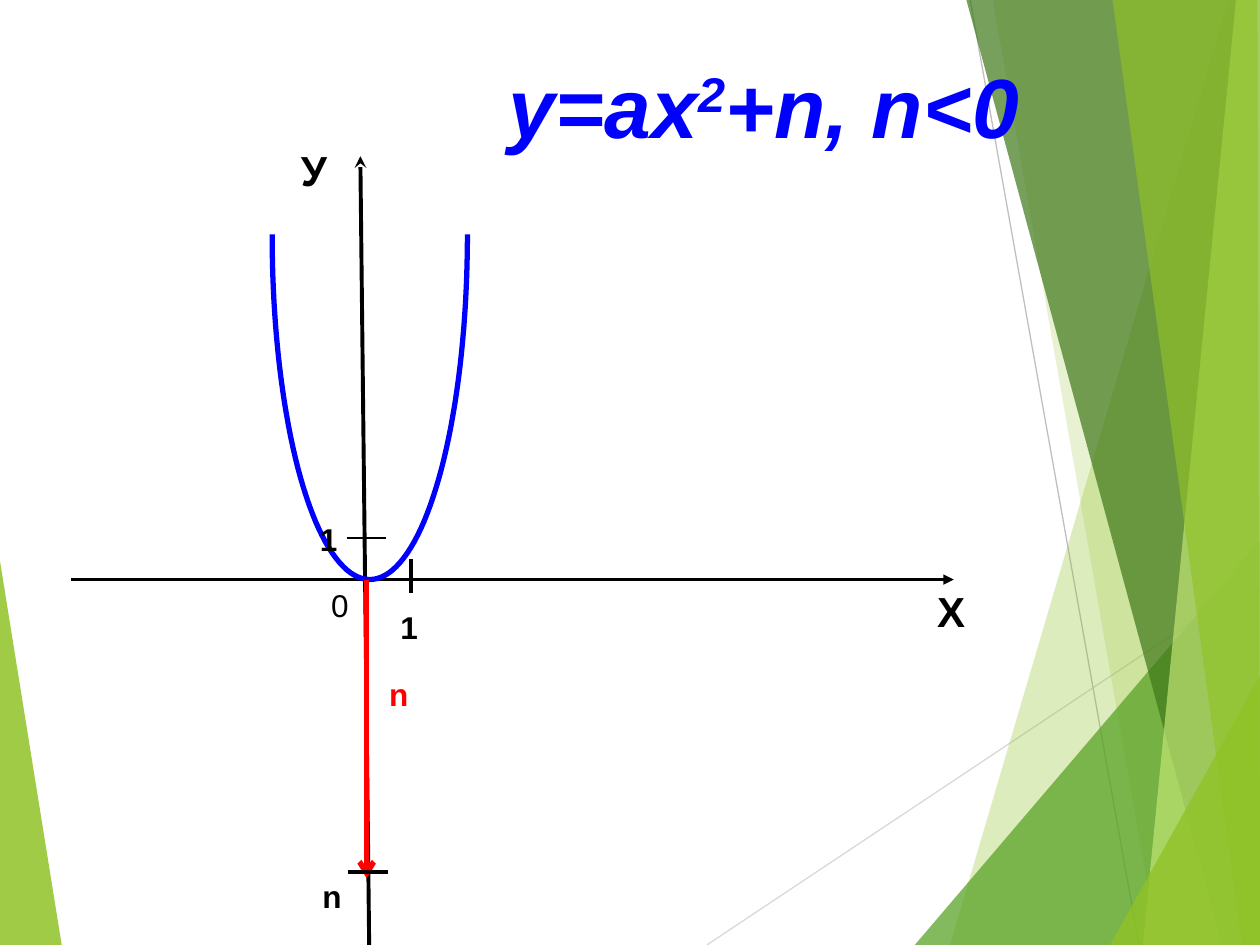
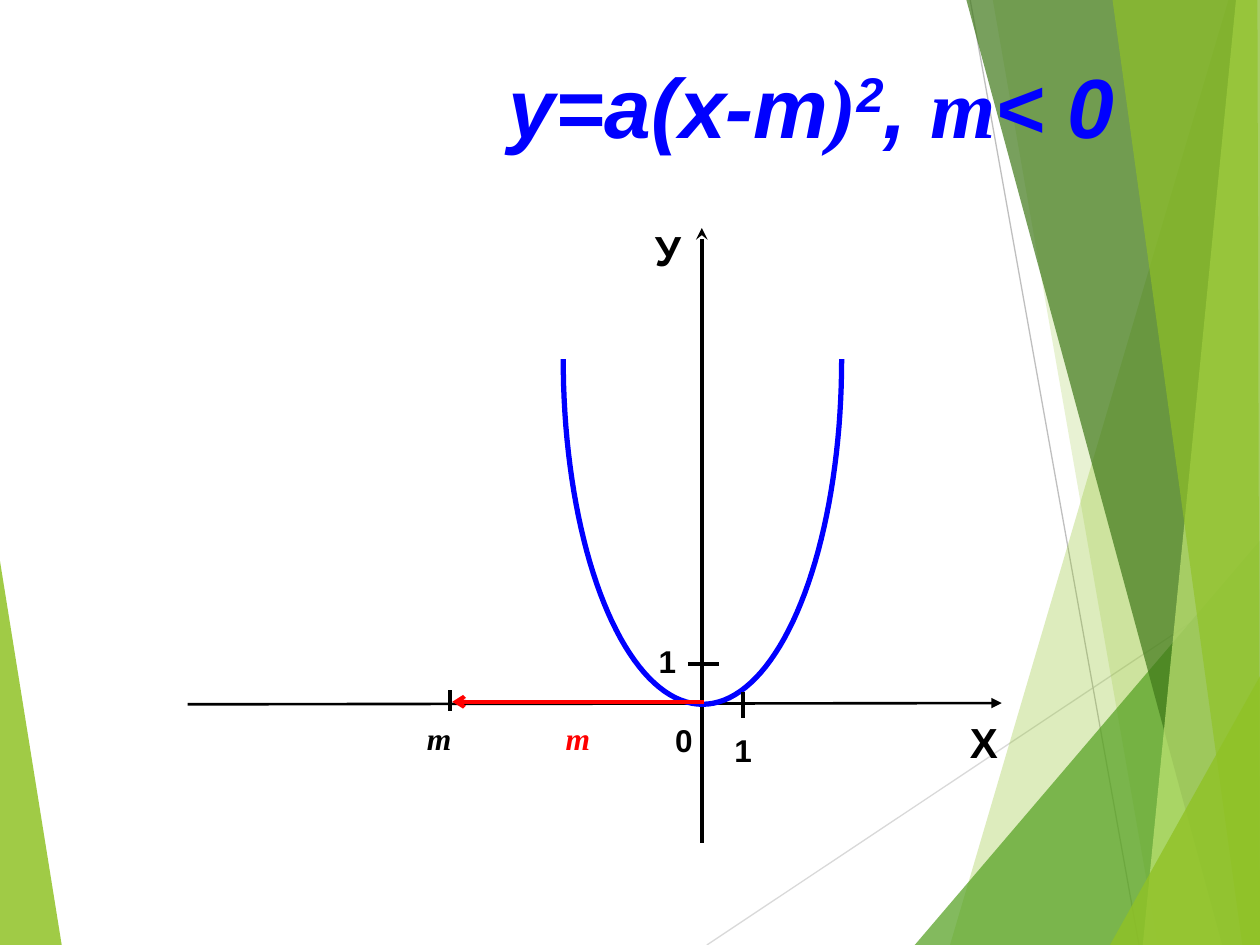
import math

from lxml import etree
from pptx import Presentation
from pptx.dml.color import RGBColor
from pptx.enum import shapes, text
from pptx.oxml.ns import qn
from pptx.util import Inches, Pt

INK = {
    "black": "000000", "blue": "0000FF", "red": "FF0000",
    "gray": "BFBFBF", "pale": "D9D9D9",
    "lime": "90C226", "green": "54A021", "dark": "3F7819", "light": "C0E474",
}
SANS, SERIF = "Arial", "Times New Roman"

# colour, opacity in percent, corners
PANELS = [
    ("lime", 30, [(9.75, 0), (7.54, 7.5), (10.01, 7.5), (10.01, 0)]),
    ("lime", 20, [(7.88, 0), (9.19, 7.5), (10.01, 7.5), (10.01, 0)]),
    ("green", 72, [(7.26, 7.5), (10, 4.29), (10.01, 7.5)]),
    ("dark", 70, [(7.67, 0), (9.7, 7.5), (10.01, 7.5), (10.01, 0)]),
    ("light", 70, [(9.81, 0), (9.07, 7.5), (10.01, 7.5), (10, 0)]),
    ("lime", 65, [(8.83, 0), (9.86, 7.5), (10, 7.5), (9.98, 0)]),
    ("lime", 80, [(8.81, 7.5), (10.01, 5.35), (10.01, 7.5)]),
]
LEFT = ("lime", 85, [(-0.01, 4.39), (0.49, 7.5), (-0.01, 7.5)])


def rgb(name):
    return RGBColor.from_string(INK[name])


def outline(slide, points, close):
    spots = [(Inches(x), Inches(y)) for x, y in points]
    pen = slide.shapes.build_freeform(*spots[0])
    pen.add_line_segments(spots[1:], close=close)
    shape = pen.convert_to_shape()
    shape.shadow.inherit = False
    return shape


def panel(slide, color, alpha, points):
    shape = outline(slide, points, True)
    shape.fill.solid()
    shape.fill.fore_color.rgb = rgb(color)
    shape.line.fill.background()
    clr = shape._element.spPr.find(".//" + qn("a:srgbClr"))
    etree.SubElement(clr, qn("a:alpha"), val=str(alpha * 1000))


def line(slide, start, end, color="black", width=2.25, tip=None):
    """Straight line; tip is the arrowhead type at its end."""
    ends = [Inches(v) for v in (*start, *end)]
    link = slide.shapes.add_connector(shapes.MSO_CONNECTOR.STRAIGHT, *ends)
    link.line.color.rgb = rgb(color)
    link.line.width = Pt(width)
    if tip:
        etree.SubElement(link.line._get_or_add_ln(), qn("a:tailEnd"), type=tip)
    etree.SubElement(link._element.spPr, qn("a:effectLst"))


def curve(slide, left, right, top, base):
    """Blue half-ellipse opening upwards, its lowest point on base."""
    mid, half, steps = (left + right) / 2, (right - left) / 2, 80
    turns = [math.pi * i / steps for i in range(steps + 1)]
    points = [(mid - half * math.cos(t), top + (base - top) * math.sin(t))
              for t in turns]
    shape = outline(slide, points, False)
    shape.fill.background()
    shape.line.color.rgb = rgb("blue")
    shape.line.width = Pt(3)


def write(slide, runs, left, top, width=0.4, height=0.4, size=18, color="black",
          font=SANS, bold=True, italic=False, wrap=True):
    """Text box; runs is a string or a list of (string, font, raised)."""
    box = slide.shapes.add_textbox(*map(Inches, (left, top, width, height)))
    frame = box.text_frame
    frame.word_wrap = wrap
    frame.auto_size = text.MSO_AUTO_SIZE.SHAPE_TO_FIT_TEXT
    if isinstance(runs, str):
        runs = [(runs, font, False)]
    for words, face, raised in runs:
        run = frame.paragraphs[0].add_run()
        run.text = words
        run.font.name, run.font.size = face, Pt(size)
        run.font.bold, run.font.italic = bold, italic
        run.font.color.rgb = rgb(color)
        if raised:
            run._r.get_or_add_rPr().set("baseline", "30000")


def title(slide, runs, width):
    write(slide, runs, 3.94, 0.38, width, 0.91, size=48, color="blue",
          italic=True, wrap=False)


def name(slide, letter, left, top):
    write(slide, letter, left, top, 0.47, 0.5, size=24)


def axes(slide, up, across):
    line(slide, *up, tip="stealth")
    line(slide, *across, width=1.5, tip="triangle")


def backdrop(deck):
    slide = deck.slides.add_slide(deck.slide_layouts[6])
    panel(slide, *LEFT)
    line(slide, (5.61, 7.5), (10.01, 4.57), "pale", 0.75)
    line(slide, (7.7, 0), (9.04, 7.5), "gray", 0.75)
    for item in PANELS:
        panel(slide, *item)
    return slide


def shift_down(deck):
    slide = backdrop(deck)
    axes(slide, ((2.93, 7.5), (2.86, 1.24)), ((0.56, 4.6), (7.57, 4.6)))
    curve(slide, 2.16, 3.71, 1.86, 4.6)
    write(slide, "0", 2.53, 4.6, bold=False)
    name(slide, "Х", 7.34, 4.6)
    name(slide, "У", 2.29, 1.1)
    line(slide, (2.91, 4.6), (2.91, 6.97), "red", 3, "arrow")
    write(slide, "n", 2.99, 5.31, 0.55, color="red")
    line(slide, (2.75, 4.27), (3.06, 4.27), width=1.5)
    write(slide, "1", 2.44, 4.08)
    write(slide, "1", 3.08, 4.78)
    line(slide, (3.26, 4.44), (3.26, 4.71))
    write(slide, "n", 2.46, 6.91, 0.55)
    line(slide, (2.76, 6.92), (3.08, 6.92))
    title(slide, [("у=aх", SANS, False), ("2", SANS, True),
                  ("+n, n<0", SANS, False)], 4.33)


def shift_left(deck):
    slide = backdrop(deck)
    axes(slide, ((5.57, 6.69), (5.57, 1.81)), ((1.49, 5.59), (7.95, 5.58)))
    curve(slide, 4.47, 6.68, 2.85, 5.59)
    write(slide, "0", 5.26, 5.67)
    line(slide, (3.57, 5.48), (3.57, 5.64))
    write(slide, "m", 3.29, 5.66, 0.52, font=SERIF, italic=True)
    line(slide, (5.59, 5.57), (3.59, 5.57), "red", tip="arrow")
    write(slide, "m", 4.39, 5.66, color="red", font=SERIF, italic=True)
    name(slide, "Х", 7.6, 5.64)
    name(slide, "У", 5.1, 1.73)
    line(slide, (5.9, 5.49), (5.9, 5.7))
    line(slide, (5.46, 5.27), (5.71, 5.27))
    write(slide, "1", 5.73, 5.75)
    write(slide, "1", 5.13, 5.05)
    title(slide, [("у=a(х-m", SANS, False), (")", SERIF, False),
                  ("2", SANS, True), (", ", SANS, False),
                  ("m", SERIF, False), ("< 0", SANS, False)], 5.07)


def main():
    deck = Presentation()
    deck.slide_width, deck.slide_height = Inches(10), Inches(7.5)
    shift_down(deck)
    shift_left(deck)
    deck.save("out.pptx")


if __name__ == "__main__":
    main()
